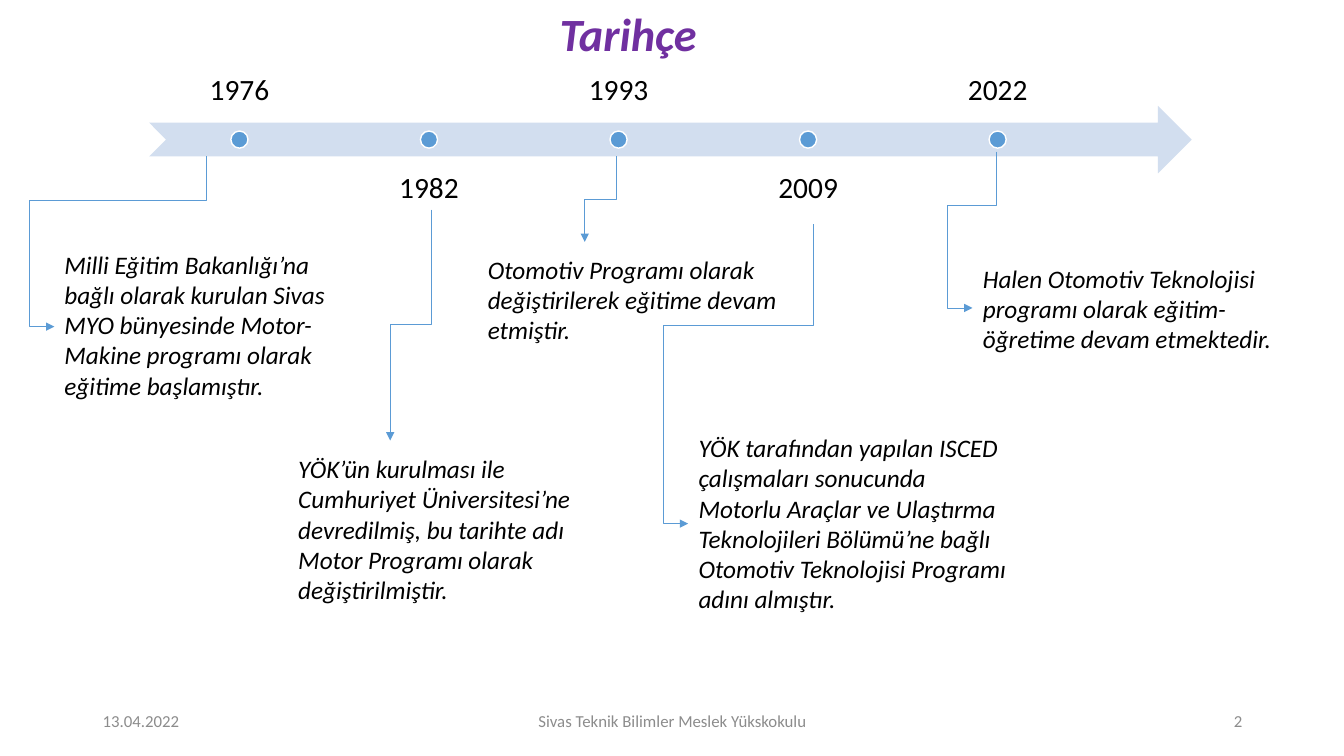
from lxml.etree import SubElement
from pptx import Presentation
from pptx.dml.color import RGBColor
from pptx.enum.shapes import MSO_CONNECTOR as CONN, MSO_SHAPE as SHAPE
from pptx.enum.text import MSO_ANCHOR as ANCHOR, MSO_AUTO_SIZE as AUTO, PP_ALIGN as ALIGN
from pptx.oxml.ns import qn
from pptx.util import Emu, Pt

COLORS = {"text": "000000", "title": "7030A0", "footer": "8C8C8C",
          "band": "D2DEEF", "accent": "5B9BD5", "white": "FFFFFF"}
PX = 9144
YEARS = ["1976", "1982", "1993", "2009", "2022"]
EVENTS = [
    (286, 445, 333, 162, "YÖK’ün kurulması ile Cumhuriyet Üniversitesi’ne devredilmiş, "
     "bu tarihte adı Motor Programı olarak değiştirilmiştir."),
    (54, 242, 279, 163, "Milli Eğitim Bakanlığı’na bağlı olarak kurulan Sivas MYO bünyesinde "
     "Motor-Makine programı olarak eğitime başlamıştır."),
    (474, 247, 333, 101, "Otomotiv Programı olarak değiştirilerek eğitime devam etmiştir."),
    (683, 424, 333, 192, "YÖK tarafından yapılan ISCED çalışmaları sonucunda Motorlu Araçlar ve "
     "Ulaştırma Teknolojileri Bölümü’ne bağlı Otomotiv Teknolojisi Programı adını almıştır."),
    (965, 256, 333, 101, "Halen Otomotiv Teknolojisi programı olarak eğitim-öğretime "
     "devam etmektedir."),
]
ARROWS = [
    (205, 155, 54, 324, 199, 29),
    (428, 208, 387, 437, 322, None),
    (611, 155, 580, 240, 198, None),
    (807, 223, 683, 520, 323, 658),
    (989, 151, 965, 306, 204, 940),
]
FOOTERS = [
    (92, 300, "13.04.2022", ALIGN.LEFT),
    (442, 450, "Sivas Teknik Bilimler Meslek Yükskokulu", ALIGN.CENTER),
    (942, 300, "2", ALIGN.RIGHT),
]


class Deck:
    """Draws styled elements on the current slide, with lengths in px."""

    def __init__(self, width, height):
        self.prs = Presentation()
        self.prs.slide_width, self.prs.slide_height = self.emu(width, height)
        self.s = self.prs.slides.add_slide(self.prs.slide_layouts[5])

    def emu(self, *lengths):
        return [Emu(n * PX) for n in lengths]

    def rgb(self, name):
        return RGBColor.from_string(COLORS[name])

    def fill_text(self, sp, text, size, color="text", align=ALIGN.LEFT, anchor=ANCHOR.TOP,
                  bold=False, italic=False):
        tf = sp.text_frame
        tf.word_wrap, tf.auto_size, tf.vertical_anchor = True, AUTO.NONE, anchor
        tf.text = text
        p = tf.paragraphs[0]
        p.alignment = align
        p.font.name, p.font.size = "Calibri", Pt(size)
        p.font.bold, p.font.italic = bold, italic
        p.font.color.rgb = self.rgb(color)
        return tf

    def title(self, box, text):
        sp = self.s.shapes.title
        sp.left, sp.top, sp.width, sp.height = self.emu(*box)
        self.fill_text(sp, text, 33, "title", bold=True, italic=True)

    def text(self, box, text, size, **style):
        return self.fill_text(self.s.shapes.add_textbox(*self.emu(*box)), text, size, **style)

    def year(self, box, text, anchor):
        tf = self.text(box, text, 21, align=ALIGN.CENTER, anchor=anchor)
        tf.margin_left = tf.margin_top = tf.margin_right = tf.margin_bottom = Emu(16 * PX)
        tf.paragraphs[0].line_spacing = 0.9

    def shape(self, kind, box, fill, line=None):
        sp = self.s.shapes.add_shape(kind, *self.emu(*box))
        sp.shadow.inherit = False
        sp.fill.solid()
        sp.fill.fore_color.rgb = self.rgb(fill)
        if line:
            sp.line.color.rgb = self.rgb(line)
            sp.line.width = Pt(1)
        else:
            sp.line.fill.background()

    def elbow(self, x1, y1, x2, y2, bend_y, bend_x=None):
        run, drop = x1 - x2, y2 - y1
        left, top = (x1 + x2 - drop) // 2, (y1 + y2 - run) // 2
        cx = self.s.shapes.add_connector(
            CONN.ELBOW, *self.emu(left, top, left + drop, top + run))
        cx.line.color.rgb = self.rgb("accent")
        cx.line.width = Pt(0.5)
        spPr = cx._element.spPr
        spPr.find(qn("a:xfrm")).set("rot", "5400000")
        ratios = [(bend_y - y1) / drop]
        if bend_x is not None:
            ratios.append((x1 - bend_x) / run)
        geom = spPr.find(qn("a:prstGeom"))
        geom.set("prst", f"bentConnector{len(ratios) + 2}")
        guides = geom.find(qn("a:avLst"))
        for i, ratio in enumerate(ratios, 1):
            SubElement(guides, qn("a:gd"), name=f"adj{i}", fmla=f"val {round(ratio * 100000)}")
        SubElement(spPr.find(qn("a:ln")), qn("a:tailEnd"), type="triangle")
        SubElement(spPr, qn("a:effectLst"))


def main():
    deck = Deck(1333, 750)
    deck.title((545, 0, 262, 66), "Tarihçe")
    deck.shape(SHAPE.NOTCHED_RIGHT_ARROW, (148, 105, 1034, 67), "band")
    for i, year in enumerate(YEARS):
        x = 148 + 188 * i
        top, anchor = (156, ANCHOR.TOP) if i % 2 else (55, ANCHOR.BOTTOM)
        deck.year((x, top, 179, 67), year, anchor)
        deck.shape(SHAPE.OVAL, (x + 81, 130, 17, 17), "accent", "white")
    for *box, text in EVENTS:
        deck.text(box, text, 18, italic=True)
    for route in ARROWS:
        deck.elbow(*route)
    for x, width, text, align in FOOTERS:
        deck.text((x, 695, width, 40), text, 12, color="footer", align=align,
                  anchor=ANCHOR.MIDDLE)
    deck.prs.save("out.pptx")


if __name__ == "__main__":
    main()
